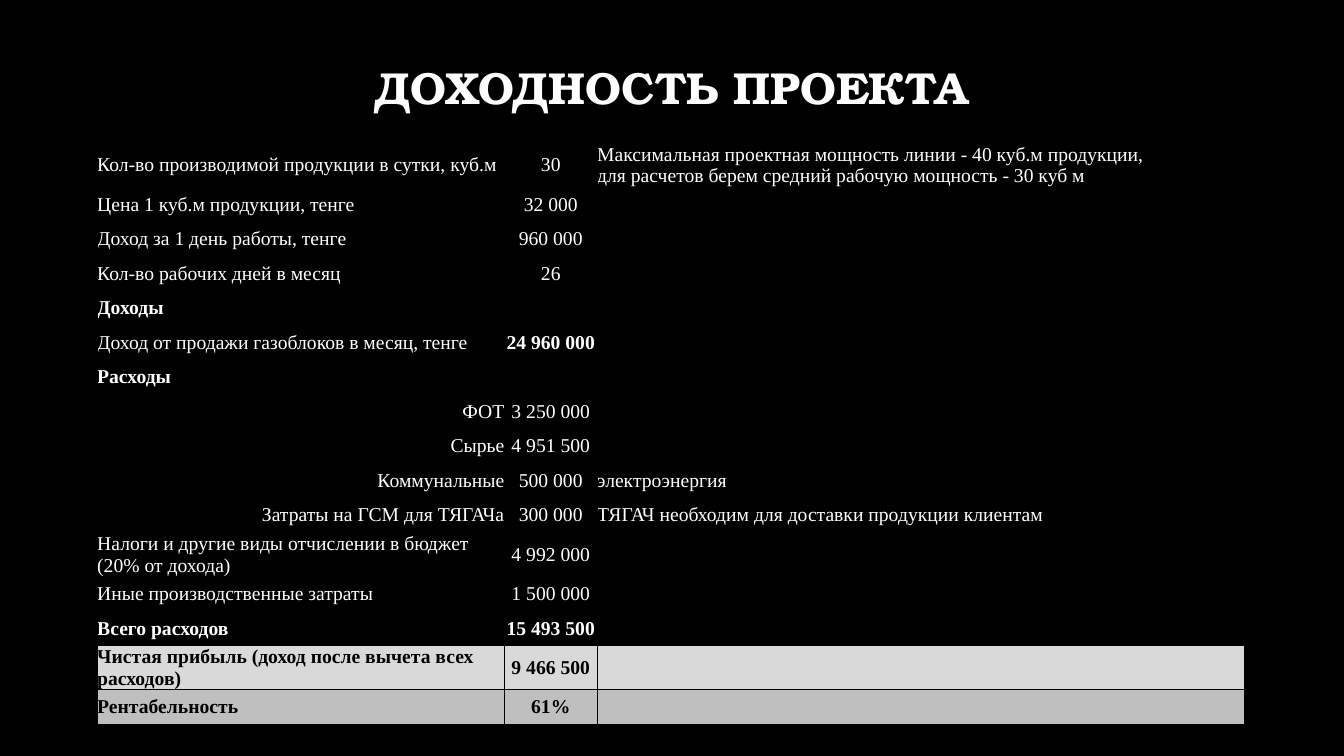
from lxml.etree import SubElement as Sub
from pptx import Presentation
from pptx.dml.color import RGBColor
from pptx.enum.text import MSO_ANCHOR as Anchor, PP_ALIGN as Align
from pptx.oxml.ns import qn
from pptx.util import Cm, Pt

BLACK = RGBColor(0x00, 0x00, 0x00)
WHITE = RGBColor(0xFF, 0xFF, 0xFF)
LIGHT = RGBColor(0xD9, 0xD9, 0xD9)
GREY = RGBColor(0xBF, 0xBF, 0xBF)

# Label, value, note
ROWS = [
    ("Кол-во производимой продукции в сутки, куб.м", "30",
     "Максимальная проектная мощность линии - 40 куб.м продукции, \n"
     "для расчетов берем средний рабочую мощность - 30 куб м"),
    ("Цена 1 куб.м продукции, тенге", "32 000", ""),
    ("Доход за 1 день работы, тенге", "960 000", ""),
    ("Кол-во рабочих дней в месяц", "26", ""),
    ("Доходы", "", ""),
    ("Доход от продажи газоблоков в месяц, тенге", "24 960 000", ""),
    ("Расходы", "", ""),
    ("ФОТ", "3 250 000", ""),
    ("Сырье", "4 951 500", ""),
    ("Коммунальные", "500 000", "электроэнергия"),
    ("Затраты на ГСМ для ТЯГАЧа", "300 000",
     "ТЯГАЧ необходим для доставки продукции клиентам"),
    ("Налоги и другие виды отчислении в бюджет (20% от дохода)",
     "4 992 000", ""),
    ("Иные производственные затраты", "1 500 000", ""),
    ("Всего расходов", "15 493 500", ""),
    ("Чистая прибыль (доход после вычета всех расходов)", "9 466 500", ""),
    ("Рентабельность", "61%", ""),
]
WIDTHS = (10.26, 2.34, 16.31)
LOW, HIGH = 0.87, 1.11
TALL = {0, 11, 14}
COSTS = range(7, 11)
HEADS = {4, 6}
INCOME = 5
TOTAL = 13
FILLS = {14: LIGHT, 15: GREY}


def write(frame, text, font="Times New Roman", size=14, color=WHITE,
          bold=False, align=Align.LEFT):
    para = frame.paragraphs[0]
    para.text = text
    para.alignment = align
    for run in para.runs:
        run.font.name = font
        run.font.size = Pt(size)
        run.font.bold = bold
        run.font.color.rgb = color
    return para


class Deck:
    def __init__(self):
        self.prs = Presentation()
        self.prs.slide_width, self.prs.slide_height = Cm(33.87), Cm(19.05)
        self.slide = self.prs.slides.add_slide(self.prs.slide_layouts[0])
        fill = self.slide.background.fill
        fill.solid()
        fill.fore_color.rgb = BLACK
        # Unused subtitle
        sub = self.slide.placeholders[1].element
        sub.getparent().remove(sub)

    def title(self, text, left, top, width, height):
        shape = self.slide.shapes.title
        shape.left, shape.top = Cm(left), Cm(top)
        shape.width, shape.height = Cm(width), Cm(height)
        frame = shape.text_frame
        frame.word_wrap = True
        frame.vertical_anchor = Anchor.BOTTOM
        para = write(frame, text, font="TeX Gyre Bonum", size=32, bold=True,
                     align=Align.CENTER)
        para.line_spacing = 0.9

    def border(self, cell, **sides):
        props = cell._tc.get_or_add_tcPr()
        for side, width in sides.items():
            line = Sub(props, qn(f"a:ln{side}"), w=str(Pt(width)))
            Sub(Sub(line, qn("a:solidFill")), qn("a:srgbClr"), val=str(BLACK))

    def cell(self, cell, text, fill=None, **style):
        cell.margin_left = cell.margin_right = 0
        cell.margin_top = cell.margin_bottom = 0
        cell.vertical_anchor = Anchor.MIDDLE
        if fill is None:
            cell.fill.background()
        else:
            cell.fill.solid()
            cell.fill.fore_color.rgb = fill
        write(cell.text_frame, text, **style)

    def table(self, left, top):
        highs = [HIGH if row in TALL else LOW for row in range(len(ROWS))]
        table = self.slide.shapes.add_table(
            len(ROWS), len(WIDTHS), Cm(left), Cm(top),
            Cm(sum(WIDTHS)), Cm(sum(highs))).table
        table.first_row = table.horz_banding = False
        for col, width in zip(table.columns, WIDTHS):
            col.width = Cm(width)
        for row, high in zip(table.rows, highs):
            row.height = Cm(high)
        for row, texts in enumerate(ROWS):
            fill = FILLS.get(row)
            for col, text in enumerate(texts):
                cell = table.cell(row, col)
                # Thick outer frame and result rows, thin inner grid
                self.border(cell,
                            L=1 if col == 0 else 0.5,
                            R=1 if col == 2 else 0.5,
                            T=1 if row == 0 or row > TOTAL else 0.5,
                            B=1 if row >= TOTAL else 0.5)
                bold = (row in HEADS or row >= TOTAL
                        or (row == INCOME and col == 1))
                align = Align.CENTER if col == 1 else Align.LEFT
                if col == 0 and row in COSTS:
                    align = Align.RIGHT
                self.cell(cell, text, fill=fill, bold=bold, align=align,
                          color=BLACK if fill else WHITE)


def main():
    deck = Deck()
    deck.title("ДОХОДНОСТЬ ПРОЕКТА", 4.42, 1.22, 24.99, 1.78)
    deck.table(2.45, 3.61)
    deck.prs.save("out.pptx")


if __name__ == "__main__":
    main()
